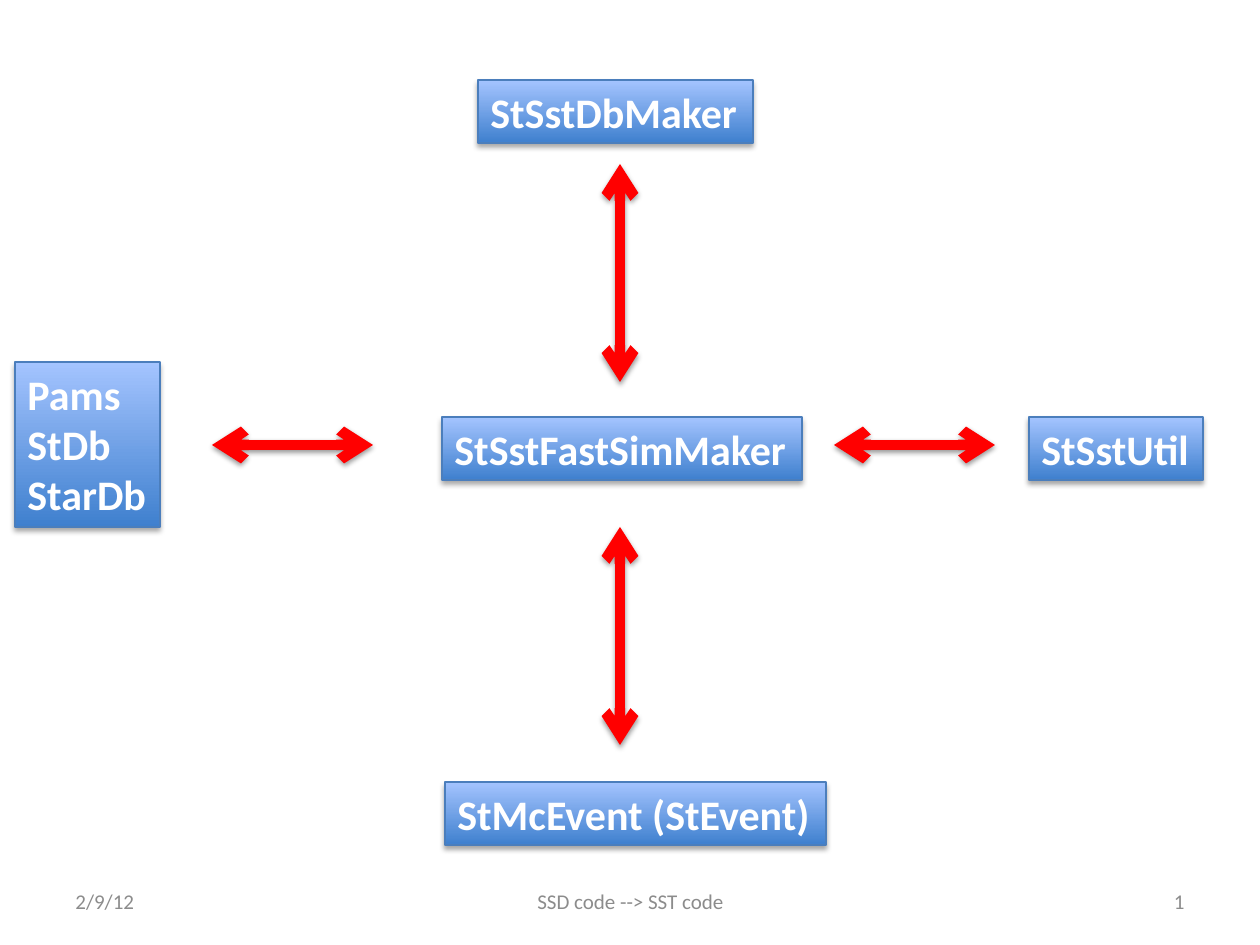
from lxml.etree import SubElement as Sub
from pptx import Presentation
from pptx.dml.color import RGBColor as Rgb
from pptx.enum.shapes import MSO_CONNECTOR as Link
from pptx.enum.text import MSO_ANCHOR as Anchor, MSO_AUTO_SIZE as Auto, PP_ALIGN as Align
from pptx.oxml.ns import qn
from pptx.util import Inches, Pt

BOXES = [
    (442, 417, 360, 63, ["StSstFastSimMaker"]),
    (478, 80, 275, 63, ["StSstDbMaker"]),
    (1029, 417, 174, 63, ["StSstUtil"]),
    (445, 782, 381, 63, ["StMcEvent (StEvent)"]),
    (15, 362, 145, 165, ["Pams", "StDb", "StarDb"]),
]
ARROWS = [
    (620, 382, 620, 164),
    (620, 745, 620, 527),
    (834, 445, 995, 445),
    (212, 445, 373, 445),
]
FOOTER = [
    (63, 294, "2/9/12", Align.LEFT),
    (431, 399, "SSD code --> SST code", Align.CENTER),
    (903, 294, "1", Align.RIGHT),
]
FOOT_Y, FOOT_H = 876, 50

THEME = {
    "font": "Calibri",
    "low": "3F80CE",
    "high": "A4C4FF",
    "edge": "4B7EBC",
    "text": "FFFFFF",
    "arrow": "FF0000",
    "foot": "8C8C8C",
    "shade": "000000",
    "box_size": 24,
    "foot_size": 12,
    "edge_width": 0.75,
    "arrow_width": 6,
}


def px(n):
    return Inches(n / 126)


def tint(name):
    return Rgb.from_string(THEME[name])


def add_shade(shape, dist, alpha):
    effects = Sub(shape._element.spPr, qn("a:effectLst"))
    shade = Sub(effects, qn("a:outerShdw"), blurRad=str(Pt(3.1)),
                dist=str(Pt(dist)), dir="5400000", rotWithShape="0")
    color = Sub(shade, qn("a:srgbClr"), val=THEME["shade"])
    Sub(color, qn("a:alpha"), val=str(alpha * 1000))


def add_text(slide, area, rows, size, color, bold=False, align=Align.LEFT):
    shape = slide.shapes.add_textbox(*map(px, area))
    frame = shape.text_frame
    frame.text = "\n".join(rows)
    for para in frame.paragraphs:
        para.alignment = align
        font = para.font
        font.name, font.size, font.bold = THEME["font"], Pt(THEME[size]), bold
        font.color.rgb = tint(color)
    return shape


def add_box(slide, *area, rows):
    box = add_text(slide, area, rows, "box_size", "text", bold=True)
    box.text_frame.word_wrap = False
    box.text_frame.auto_size = Auto.SHAPE_TO_FIT_TEXT
    box.fill.gradient()
    box.fill.gradient_angle = 90
    for stop, name in zip(box.fill.gradient_stops, ("low", "high")):
        stop.color.rgb = tint(name)
    box.line.color.rgb = tint("edge")
    box.line.width = Pt(THEME["edge_width"])
    add_shade(box, 1.8, 35)


def add_arrow(slide, *ends):
    arrow = slide.shapes.add_connector(Link.STRAIGHT, *map(px, ends))
    arrow.line.color.rgb = tint("arrow")
    arrow.line.width = Pt(THEME["arrow_width"])
    line = arrow._element.spPr.find(qn("a:ln"))
    for end in ("a:headEnd", "a:tailEnd"):
        Sub(line, qn(end), type="arrow")
    add_shade(arrow, 1.6, 38)


def main():
    deck = Presentation()
    deck.slide_width, deck.slide_height = px(1260), px(945)
    slide = deck.slides.add_slide(deck.slide_layouts[6])
    for *area, rows in BOXES:
        add_box(slide, *area, rows=rows)
    for ends in ARROWS:
        add_arrow(slide, *ends)
    for left, width, words, align in FOOTER:
        note = add_text(slide, (left, FOOT_Y, width, FOOT_H), [words],
                        "foot_size", "foot", align=align)
        note.text_frame.word_wrap = True
        note.text_frame.vertical_anchor = Anchor.MIDDLE
    deck.save("out.pptx")


if __name__ == "__main__":
    main()
